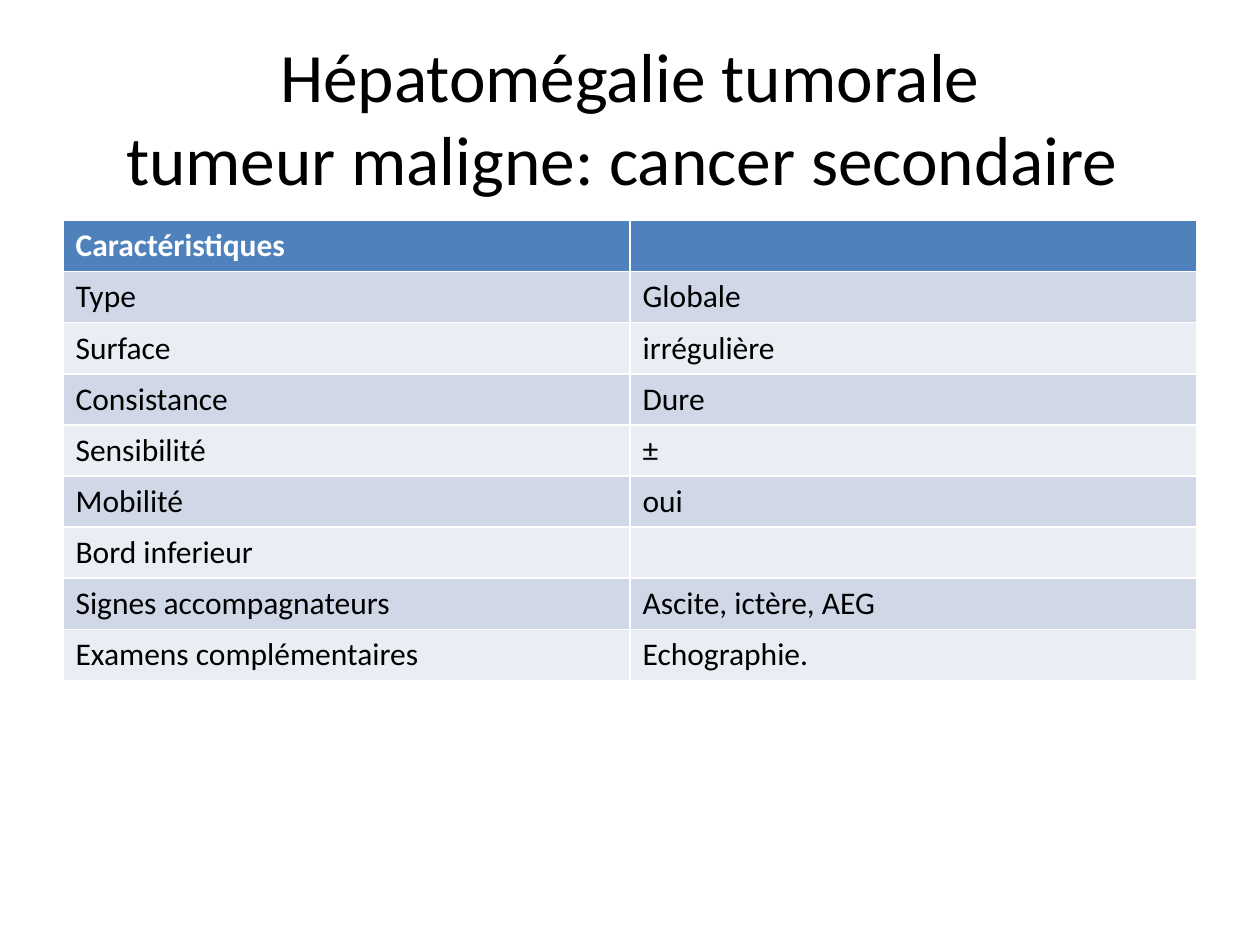
from pptx import Presentation
from pptx.dml.color import RGBColor
from pptx.enum.text import MSO_ANCHOR, MSO_AUTO_SIZE, PP_ALIGN
from pptx.util import Inches, Pt

FONT = "Calibri"
BLACK = RGBColor(0x00, 0x00, 0x00)
WHITE = RGBColor(0xFF, 0xFF, 0xFF)
HEADER_BLUE = RGBColor(0x4F, 0x81, 0xBD)
BAND_DARK = RGBColor(0xD0, 0xD8, 0xE8)
BAND_LIGHT = RGBColor(0xE9, 0xED, 0xF4)

TITLE = "Hépatomégalie tumorale\vtumeur maligne: cancer secondaire "
ROWS = [
    ("Caractéristiques", ""),
    ("Type", "Globale"),
    ("Surface", "irrégulière"),
    ("Consistance", "Dure"),
    ("Sensibilité", "±"),
    ("Mobilité", "oui"),
    ("Bord inferieur", ""),
    ("Signes accompagnateurs", "Ascite, ictère, AEG"),
    ("Examens complémentaires", "Echographie."),
]


def format_font(font, size, color, bold=False):
    """Set the typeface, size, colour and weight of a font."""
    font.name = FONT
    font.size = Pt(size)
    font.color.rgb = color
    font.bold = bold


def place_title(slide, left, top, width, height):
    """Move the title placeholder into the box and fill it."""
    title = slide.shapes.title
    title.left, title.top, title.width, title.height = left, top, width, height
    frame = title.text_frame
    frame.text = TITLE
    frame.word_wrap = True
    frame.auto_size = MSO_AUTO_SIZE.NONE
    frame.vertical_anchor = MSO_ANCHOR.MIDDLE
    paragraph = frame.paragraphs[0]
    paragraph.alignment = PP_ALIGN.CENTER
    format_font(paragraph.font, 39.6, BLACK)


def place_characteristics(slide, left, top, width, height):
    """Fill the box with the banded table of clinical characteristics."""
    table = slide.shapes.add_table(
        len(ROWS), len(ROWS[0]), left, top, width, height
    ).table
    for row_index, values in enumerate(ROWS):
        is_header = row_index == 0
        band = BAND_DARK if row_index % 2 else BAND_LIGHT
        for column_index, value in enumerate(values):
            cell = table.cell(row_index, column_index)
            cell.fill.solid()
            cell.fill.fore_color.rgb = HEADER_BLUE if is_header else band
            cell.text = value
            format_font(
                cell.text_frame.paragraphs[0].font,
                18,
                WHITE if is_header else BLACK,
                bold=is_header,
            )


def main():
    """Build the slide and save the presentation."""
    presentation = Presentation()
    presentation.slide_width = Inches(10)
    presentation.slide_height = Inches(7.5)
    slide = presentation.slides.add_slide(presentation.slide_layouts[5])
    place_title(slide, Inches(0.5), Inches(0.3), Inches(9), Inches(1.25))
    place_characteristics(slide, Inches(0.5), Inches(1.75), Inches(9), Inches(3.65))
    presentation.save("out.pptx")


if __name__ == "__main__":
    main()
